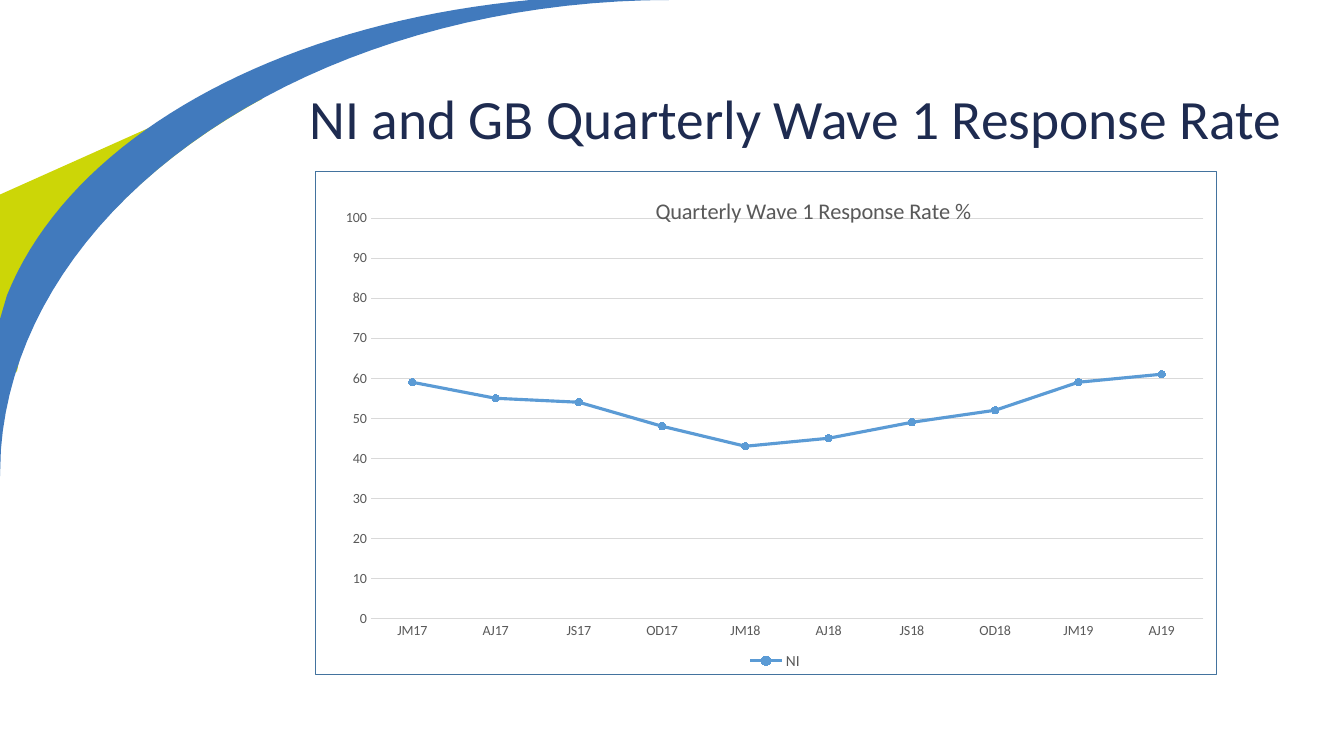
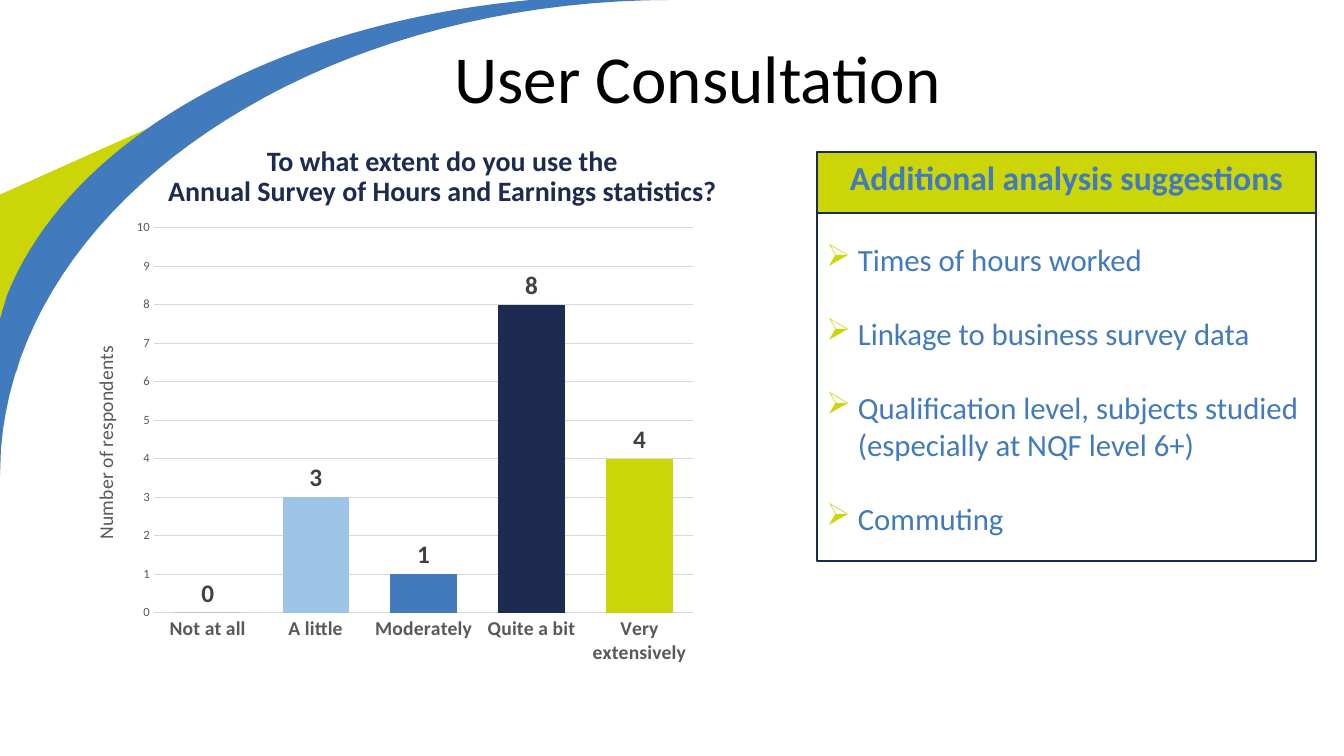
from pptx import Presentation, util as u
from pptx.chart.data import CategoryChartData
from pptx.dml.color import RGBColor
from pptx.enum import chart as ch, shapes, text
from pptx.oxml import ns, parse_xml

HUE = dict(navy="1E2B50", blue="417ABD", lime="CCD607", sky="9DC3E6", line="5B9BD5",
           edge="43739E", gray="595959", dark="404040", grid="D9D9D9", black="000000", white="FFFFFF")
FACE = "Calibri"

BANDS = [
    ("lime", [(181, 58), (187, 71), (183, 73), (101, 119, 40, 182, 14, 256),
              (12, 266), (0, 239), (0, 139)]),
    ("blue", [(515, 0), (480, 0), (223, 0, 14, 143, 0.7, 321), (0, 341), (0, 228),
              (5, 211), (50, 99, 196, 17, 379, 0)]),
]

RATE = dict(
    kind=ch.XL_CHART_TYPE.LINE_MARKERS, box=(238.3, 122.4, 630.7, 359.3), name="NI",
    data=[("JM17", 59), ("AJ17", 55), ("JS17", 54), ("OD17", 48), ("JM18", 43),
          ("AJ18", 45), ("JS18", 49), ("OD18", 52), ("JM19", 59), ("AJ19", 61)],
    plot=(0.042, 0.093, 0.943, 0.796), top=100, step=10,
    cat=dict(size=10), val=dict(size=10))
USE = dict(
    kind=ch.XL_CHART_TYPE.COLUMN_CLUSTERED, box=(51.8, 151.2, 453.6, 330.5), name="Series 1",
    data=[("Not at all", 0), ("A little", 3), ("Moderately", 1), ("Quite a bit", 8),
          ("Very extensively", 4)],
    plot=(0.128, 0.035, 0.85, 0.832), top=10, step=1,
    cat=dict(size=14, bold=True), val=dict(size=9))
BARS = ["navy", "sky", "blue", "navy", "lime"]
IDEAS = ["Times of hours worked", "Linkage to business survey data",
         "Qualification level, subjects studied (especially at NQF level 6+)", "Commuting"]


def rgb(hue):
    return RGBColor.from_string(HUE[hue])


def pts(box):
    return [u.Pt(n) for n in box]


def style(font, hue="gray", size=10, bold=False):
    for key, val in dict(name=FACE, size=u.Pt(size), bold=bold).items():
        setattr(font, key, val)
    font.color.rgb = rgb(hue)


def paint(part, fill=None, line=None, wide=1):
    if fill:
        part.fill.solid()
        part.fill.fore_color.rgb = rgb(fill)
    else:
        part.fill.background()
    if line:
        part.line.color.rgb = rgb(line)
        part.line.width = u.Pt(wide)
    else:
        part.line.fill.background()


def trace(segs):
    spots = []
    for seg in segs:
        if len(seg) == 2:
            spots.append(seg)
            continue
        ctrl = [spots[-1], seg[:2], seg[2:4], seg[4:]]
        for i in range(1, 41):
            t = i / 40
            mix = ((1 - t) ** 3, 3 * t * (1 - t) ** 2, 3 * t * t * (1 - t), t ** 3)
            spots.append(tuple(sum(m * c[k] for m, c in zip(mix, ctrl)) for k in (0, 1)))
    return [pts(spot) for spot in spots]


def band(slide, layout, at, fill, segs):
    spots = trace(segs)
    pen = slide.shapes.build_freeform(*spots[0])
    pen.add_line_segments(spots[1:], close=True)
    shape = pen.convert_to_shape()
    shape.shadow.inherit = False
    paint(shape, fill)
    layout.shapes.element.insert(at, shape.element)


def block(group, box, **look):
    shape = group.add_shape(shapes.MSO_SHAPE.RECTANGLE, *pts(box))
    shape.shadow.inherit = False
    paint(shape, **look)
    return shape


def write(frame, words, align, anchor, space=1.0, **fmt):
    frame.word_wrap = True
    frame.vertical_anchor = anchor
    frame.text = words
    para = frame.paragraphs[0]
    para.alignment = align
    para.line_spacing = space
    for run in para.runs:
        style(run.font, **fmt)


def head(slide, box, words, align, **fmt):
    title = slide.shapes.title
    title.left, title.top, title.width, title.height = pts(box)
    write(title.text_frame, words, align, text.MSO_ANCHOR.MIDDLE, 0.9, hue="navy", **fmt)


def pin(node, at, spot, inner=False):
    for old in node.findall(ns.qn("c:layout")):
        node.remove(old)
    tags = [("layoutTarget", "inner")] if inner else []
    tags += [("xMode", "edge"), ("yMode", "edge"), *zip("xywh", spot)]
    body = "".join(f'<c:{tag} val="{val}"/>' for tag, val in tags)
    node.insert(at, parse_xml(
        f'<c:layout {ns.nsdecls("c")}><c:manualLayout>{body}</c:manualLayout></c:layout>'))


def graph(slide, info):
    data = CategoryChartData()
    data.categories = [name for name, _ in info["data"]]
    data.add_series(info["name"], [val for _, val in info["data"]])
    chart = slide.shapes.add_chart(info["kind"], *pts(info["box"]), data).chart
    style(chart.font, "black")
    chart.has_legend = chart.has_title = False
    cat, val = chart.category_axis, chart.value_axis
    for axis, key in ((cat, "cat"), (val, "val")):
        axis.major_tick_mark = axis.minor_tick_mark = ch.XL_TICK_MARK.NONE
        style(axis.tick_labels.font, **info[key])
    val.minimum_scale, val.maximum_scale, val.major_unit = 0, info["top"], info["step"]
    val.tick_labels.number_format = "0"
    val.tick_labels.number_format_is_linked = False
    val.has_major_gridlines = True
    val.format.line.fill.background()
    for part in (cat, val.major_gridlines):
        part.format.line.color.rgb = rgb("grid")
        part.format.line.width = u.Pt(0.75)
    pin(chart.element.find(".//" + ns.qn("c:plotArea")), 0, info["plot"], True)
    plot = chart.plots[0]
    plot.vary_by_categories = False
    return chart, plot, plot.series[0]


def caption(owner, words, size):
    owner.text_frame.text = words
    style(owner.text_frame.paragraphs[0].runs[0].font, size=size)


def rates(slide):
    head(slide, (213.8, 39.6, 731.5, 94.3), "NI and GB Quarterly Wave 1 Response Rate",
         text.PP_ALIGN.LEFT, size=39.6)
    block(slide.shapes, (225.4, 122.4, 643.7, 359.3), fill="white", line="edge")
    chart, _, series = graph(slide, RATE)
    chart.has_title = True
    caption(chart.chart_title, "Quarterly Wave 1 Response Rate %", 16)
    pin(chart.chart_title.element, 1, (0.36, 0.04))
    chart.has_legend = True
    chart.legend.position = ch.XL_LEGEND_POSITION.BOTTOM
    chart.legend.include_in_layout = False
    style(chart.legend.font, size=11)
    series.smooth = False
    series.format.line.color.rgb = rgb("line")
    series.format.line.width = u.Pt(2.25)
    series.marker.style = ch.XL_MARKER_STYLE.CIRCLE
    series.marker.size = 5
    paint(series.marker.format, "line", "line", 0.75)


def users(slide):
    head(slide, (107, 97, 418, 59),
         "To what extent do you use the\vAnnual Survey of Hours and Earnings statistics?",
         text.PP_ALIGN.CENTER, size=20, bold=True)
    chart, plot, series = graph(slide, USE)
    plot.gap_width, plot.overlap = 63, -10
    for i, hue in enumerate(BARS):
        paint(series.points[i].format, hue)
    tags = series.data_labels
    tags.show_value = True
    tags.position = ch.XL_LABEL_POSITION.OUTSIDE_END
    style(tags.font, "dark", size=18, bold=True)
    name = chart.value_axis.axis_title
    caption(name, "Number of respondents", 14)
    turn = name.element.find(".//" + ns.qn("a:bodyPr"))
    turn.set("rot", "-5400000")
    turn.set("vert", "horz")

    panel = slide.shapes.add_group_shape().shapes
    block(panel, (583.5, 152, 356.5, 248.5), line="navy", wide=1.5)
    bar = block(panel, (583.5, 108.7, 356.5, 43.3), fill="lime", line="navy", wide=1.5)
    top = text.MSO_ANCHOR.TOP
    write(bar.text_frame, "Additional analysis suggestions", text.PP_ALIGN.CENTER, top,
          hue="blue", size=24, bold=True)
    lead = slide.shapes.add_textbox(*pts((317.5, 22.3, 368, 65.5)))
    write(lead.text_frame, "User Consultation", text.PP_ALIGN.LEFT, top, hue="black", size=48)

    frame = slide.shapes.add_textbox(*pts((583.2, 168.5, 355, 232))).text_frame
    frame.word_wrap = True
    for i, idea in enumerate(IDEAS):
        para = frame.add_paragraph() if i else frame.paragraphs[0]
        props = para._p.get_or_add_pPr()
        props.set("marL", str(u.Pt(22.5)))
        props.set("indent", str(-u.Pt(22.5)))
        for tag in (f'buClr {ns.nsdecls("a")}><a:srgbClr val="{HUE["lime"]}"/></a:buClr>',
                    f'buChar {ns.nsdecls("a")} char="➢"/>'):
            props.append(parse_xml("<a:" + tag))
        para.space_before = u.Pt(26.5 if i else 0)
        run = para.add_run()
        run.text = idea
        style(run.font, "blue", size=22)


def main():
    deck = Presentation()
    deck.slide_width, deck.slide_height = pts((960, 540))
    layout = deck.slide_layouts[5]
    first, second = (deck.slides.add_slide(layout) for _ in range(2))
    for at, (fill, segs) in enumerate(BANDS, 2):
        band(first, layout, at, fill, segs)
    rates(first)
    users(second)
    deck.save("out.pptx")


if __name__ == "__main__":
    main()
